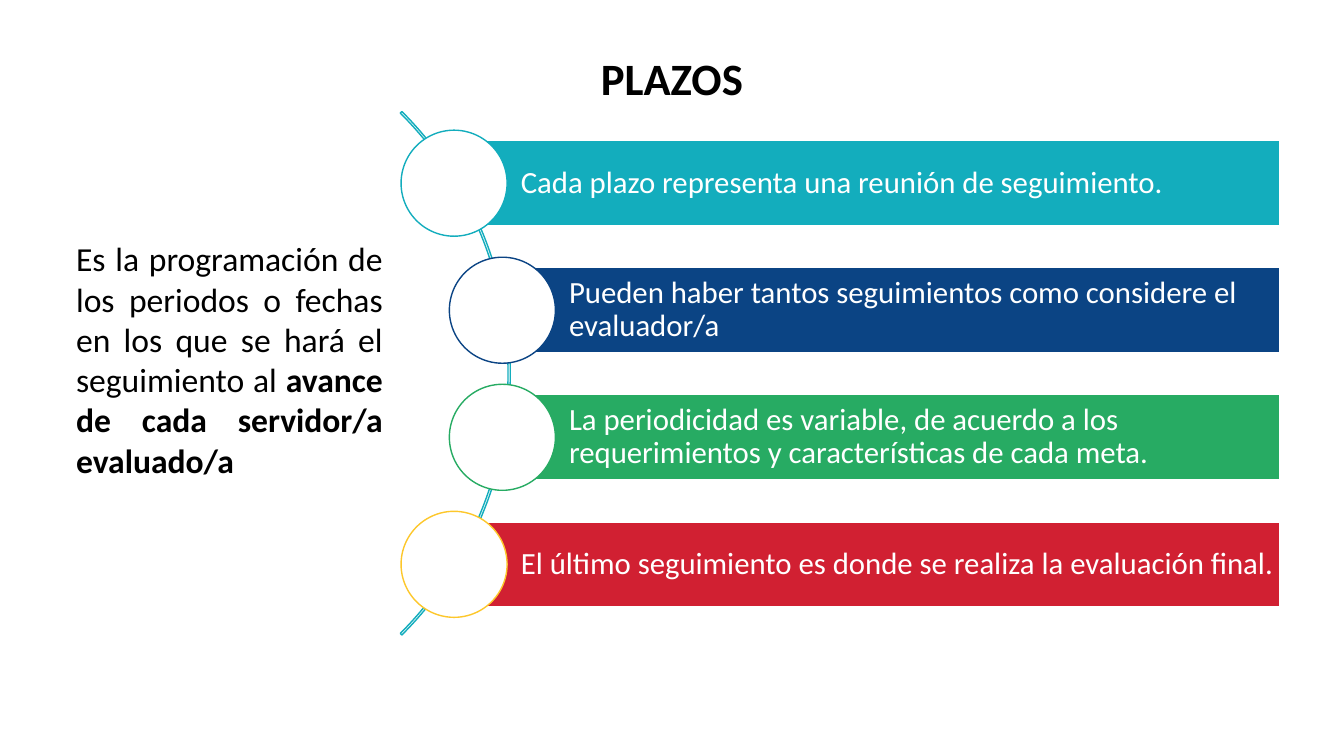
from pptx import Presentation
from pptx.dml.color import RGBColor
from pptx.enum.shapes import MSO_SHAPE
from pptx.enum.text import MSO_ANCHOR, PP_ALIGN
from pptx.util import Pt

PX = 9525  # EMU per px, 96 px to the inch


def color(hex_string):
    return RGBColor.from_string(hex_string)


def add_outlined(kind, left, top, width, height, fill, line):
    shape = slide.shapes.add_shape(kind, left * PX, top * PX, width * PX, height * PX)
    shape.shadow.inherit = False
    if fill:
        shape.fill.solid()
        shape.fill.fore_color.rgb = color(fill)
    else:
        shape.fill.background()
    shape.line.color.rgb = color(line)
    shape.line.width = Pt(1)
    return shape


presentation = Presentation()
presentation.slide_width = 1280 * PX
presentation.slide_height = 720 * PX
slide = presentation.slides.add_slide(presentation.slide_layouts[6])

# Title
title = slide.shapes.add_textbox(88 * PX, 38 * PX, 1104 * PX, 78 * PX)
title.text_frame.word_wrap = True
title.text_frame.vertical_anchor = MSO_ANCHOR.MIDDLE
title.text_frame.text = "PLAZOS"
paragraph = title.text_frame.paragraphs[0]
paragraph.alignment = PP_ALIGN.CENTER
paragraph.line_spacing = 0.9
paragraph.font.name = "Calibri"
paragraph.font.size = Pt(32)
paragraph.font.bold = True
paragraph.font.color.rgb = color("000000")

# Definition on the left
definition = slide.shapes.add_textbox(63 * PX, 222 * PX, 311 * PX, 272 * PX)
definition.text_frame.word_wrap = True
paragraph = definition.text_frame.paragraphs[0]
paragraph.alignment = PP_ALIGN.JUSTIFY
for text, bold in [
    ("Es la programación de los periodos o fechas en los que se hará el seguimiento al ", False),
    ("avance de cada servidor/a evaluado/a", True),
]:
    run = paragraph.add_run()
    run.text = text
    run.font.name = "Calibri"
    run.font.size = Pt(24)
    run.font.bold = bold
    run.font.color.rgb = color("000000")

# Arc behind the circles, from 315 to 45 degrees
arc = add_outlined(MSO_SHAPE.BLOCK_ARC, -219, 3, 705, 705, None, "13ADBD")
arc.adjustments[0] = 189
arc.adjustments[1] = 27
arc.adjustments[2] = 0.003

# Bars with their circles
BAR_TOP, BAR_HEIGHT, BAR_RIGHT, PITCH, CIRCLE = 134, 81, 1219, 121, 101
deadlines = [
    (432, "13ADBD", "13ADBD", "Cada plazo representa una reunión de seguimiento."),
    (478, "0B4484", "0B4484", "Pueden haber tantos seguimientos como considere el evaluador/a"),
    (478, "27AB63", "27AB63",
     "La periodicidad es variable, de acuerdo a los requerimientos y características de cada meta."),
    (432, "D12032", "FDC72B", "El último seguimiento es donde se realiza la evaluación final."),
]
for index, (left, fill, ring, text) in enumerate(deadlines):
    top = BAR_TOP + index * PITCH
    bar = add_outlined(MSO_SHAPE.RECTANGLE, left, top, BAR_RIGHT - left, BAR_HEIGHT, fill, "FFFFFF")
    frame = bar.text_frame
    frame.word_wrap = True
    frame.vertical_anchor = MSO_ANCHOR.MIDDLE
    frame.margin_left = 64 * PX
    frame.margin_right = 4 * PX
    frame.margin_top = frame.margin_bottom = 6 * PX
    frame.text = text
    paragraph = frame.paragraphs[0]
    paragraph.alignment = PP_ALIGN.LEFT
    paragraph.line_spacing = 0.9
    paragraph.font.name = "Calibri"
    paragraph.font.size = Pt(22)
    paragraph.font.color.rgb = color("FFFFFF")
    add_outlined(MSO_SHAPE.OVAL, left - CIRCLE // 2, top - (CIRCLE - BAR_HEIGHT) // 2,
                 CIRCLE, CIRCLE, "FFFFFF", ring)

presentation.save("out.pptx")
